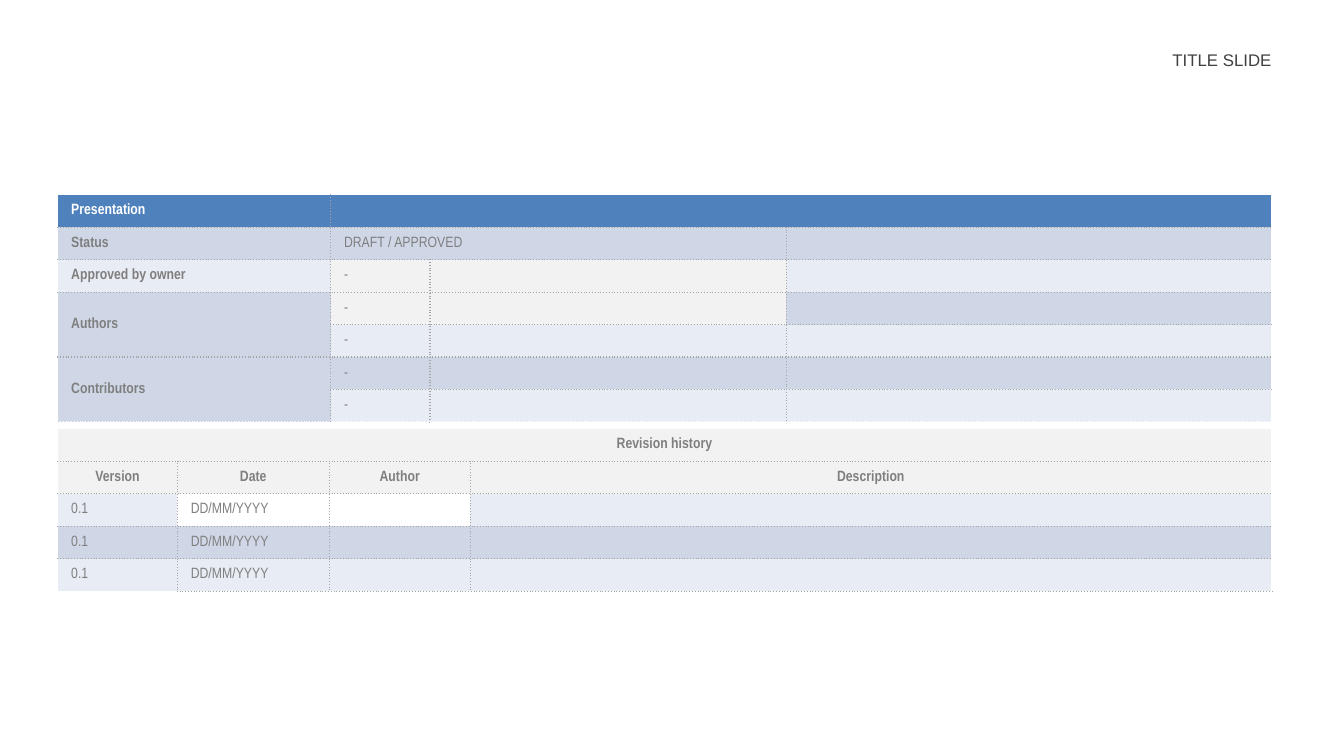
from dataclasses import dataclass

from lxml.etree import SubElement
from pptx import Presentation
from pptx.dml.color import RGBColor
from pptx.enum.text import MSO_ANCHOR, PP_ALIGN
from pptx.oxml import parse_xml
from pptx.oxml.ns import nsdecls, qn
from pptx.util import Inches, Pt


@dataclass(frozen=True)
class Theme:
    title_font: str = "Arial"
    table_font: str = "Arial Narrow"
    title_size: int = 9
    table_size: int = 8
    title: str = "404040"
    text: str = "7F7F7F"
    white: str = "FFFFFF"
    header: str = "4F81BD"
    dark_band: str = "CFD7E7"
    light_band: str = "E8ECF4"
    gray: str = "F2F2F2"
    border: str = "A5A5A5"


THEME = Theme()
FILLS = {
    "H": THEME.header,
    "D": THEME.dark_band,
    "L": THEME.light_band,
    "G": THEME.gray,
    "W": THEME.white,
}


def set_font(paragraph, name, size, color, bold=False):
    paragraph.font.name = name
    paragraph.font.size = Pt(size)
    paragraph.font.bold = bold
    paragraph.font.color.rgb = RGBColor.from_string(color)


def add_title(slide, box, text):
    title = slide.shapes.title
    title.left, title.top, title.width, title.height = map(Inches, box)
    title.text_frame.text = text
    title.text_frame.vertical_anchor = MSO_ANCHOR.TOP
    paragraph = title.text_frame.paragraphs[0]
    paragraph.alignment = PP_ALIGN.RIGHT
    set_font(paragraph, THEME.title_font, THEME.title_size, THEME.title)


def set_borders(cell, colors):
    properties = cell._tc.get_or_add_tcPr()
    for index, side in enumerate("LRTB"):
        line = parse_xml(
            f'<a:ln{side} {nsdecls("a")} w="{Pt(0.75)}"><a:solidFill>'
            f'<a:srgbClr val="{colors[side]}"/></a:solidFill>'
            f'<a:prstDash val="sysDot"/></a:ln{side}>'
        )
        properties.insert(index, line)


def edge_colors(cell, row, column, row_count, column_count):
    on_edge = {
        "L": column == 0,
        "R": column + cell.span_width == column_count,
        "T": row == 0,
        "B": row + cell.span_height == row_count,
    }
    return {side: THEME.white if edge else THEME.border for side, edge in on_edge.items()}


def format_text(cell, text, color, bold, alignment):
    cell.text = text
    cell.vertical_anchor = MSO_ANCHOR.MIDDLE
    paragraph = cell.text_frame.paragraphs[0]
    paragraph.alignment = alignment
    set_font(paragraph, THEME.table_font, THEME.table_size, color, bold)
    if not text:
        SubElement(paragraph._p, qn("a:endParaRPr"), sz=str(THEME.table_size * 100))


def add_grid(slide, box, widths, texts, fills, merges, is_bold, is_centered):
    row_count, column_count = len(fills), len(widths)
    table = slide.shapes.add_table(row_count, column_count, *map(Inches, box)).table
    for column, width in zip(table.columns, widths):
        column.width = Inches(width)
    for row in table.rows:
        row.height = Inches(box[3] / row_count)
    for first, last in merges:
        table.cell(*first).merge(table.cell(*last))

    for row, codes in enumerate(fills):
        for column, code in enumerate(codes):
            cell = table.cell(row, column)
            cell.fill.solid()
            cell.fill.fore_color.rgb = RGBColor.from_string(FILLS[code])
            text = texts[row][column] if column < len(texts[row]) else ""
            color = THEME.white if code == "H" else THEME.text
            alignment = PP_ALIGN.CENTER if is_centered(row) else PP_ALIGN.LEFT
            format_text(cell, text, color, is_bold(row, column), alignment)
            if not cell.is_spanned:
                set_borders(cell, edge_colors(cell, row, column, row_count, column_count))
    return table


def add_document_table(slide, box):
    texts = [
        ["Presentation"],
        ["Status", "DRAFT / APPROVED"],
        ["Approved by owner", "-"],
        ["Authors", "-"],
        ["", "-"],
        ["Contributors", "-"],
        ["", "-"],
    ]
    fills = ["HHHH", "DDDD", "LGGL", "DGGD", "DLLL", "DDDD", "DLLL"]
    merges = [((0, 1), (0, 3)), ((1, 1), (1, 2)), ((3, 0), (4, 0)), ((5, 0), (6, 0))]
    add_grid(slide, box, [2.03, 0.74, 2.65, 3.61], texts, fills, merges,
             is_bold=lambda row, column: column == 0,
             is_centered=lambda row: False)


def add_revision_table(slide, box):
    texts = [
        ["Revision history"],
        ["Version", "Date", "Author", "Description"],
        *[["0.1", "DD/MM/YYYY"]] * 3,
    ]
    fills = ["GGGG", "GGGG", "LWWL", "DDDD", "LLLL"]
    table = add_grid(slide, box, [0.89, 1.13, 1.05, 5.96], texts, fills,
                     [((0, 0), (0, 3))],
                     is_bold=lambda row, column: row < 2,
                     is_centered=lambda row: row < 2)
    for column in range(1, 4):
        bottom = table.cell(4, column)._tc.tcPr.find(qn("a:lnB"))
        bottom.find(".//" + qn("a:srgbClr")).set("val", THEME.border)


def main():
    presentation = Presentation()
    presentation.slide_width = Inches(10)
    presentation.slide_height = presentation.slide_width * 9 // 16
    slide = presentation.slides.add_slide(presentation.slide_layouts[5])
    add_title(slide, (1.06, 0.32, 8.5, 0.18), "TITLE SLIDE")
    add_document_table(slide, (0.43, 1.45, 9.03, 1.69))
    add_revision_table(slide, (0.43, 3.19, 9.03, 1.21))
    presentation.save("out.pptx")


if __name__ == "__main__":
    main()
